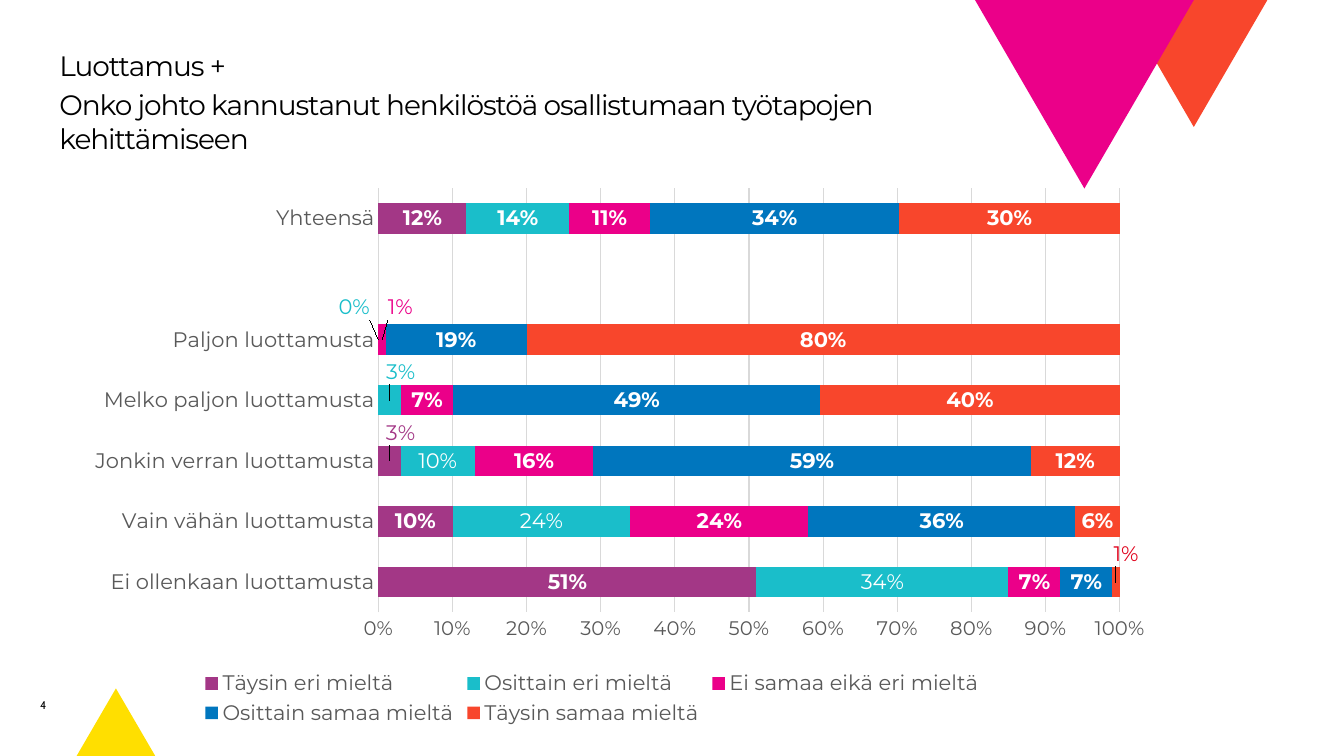
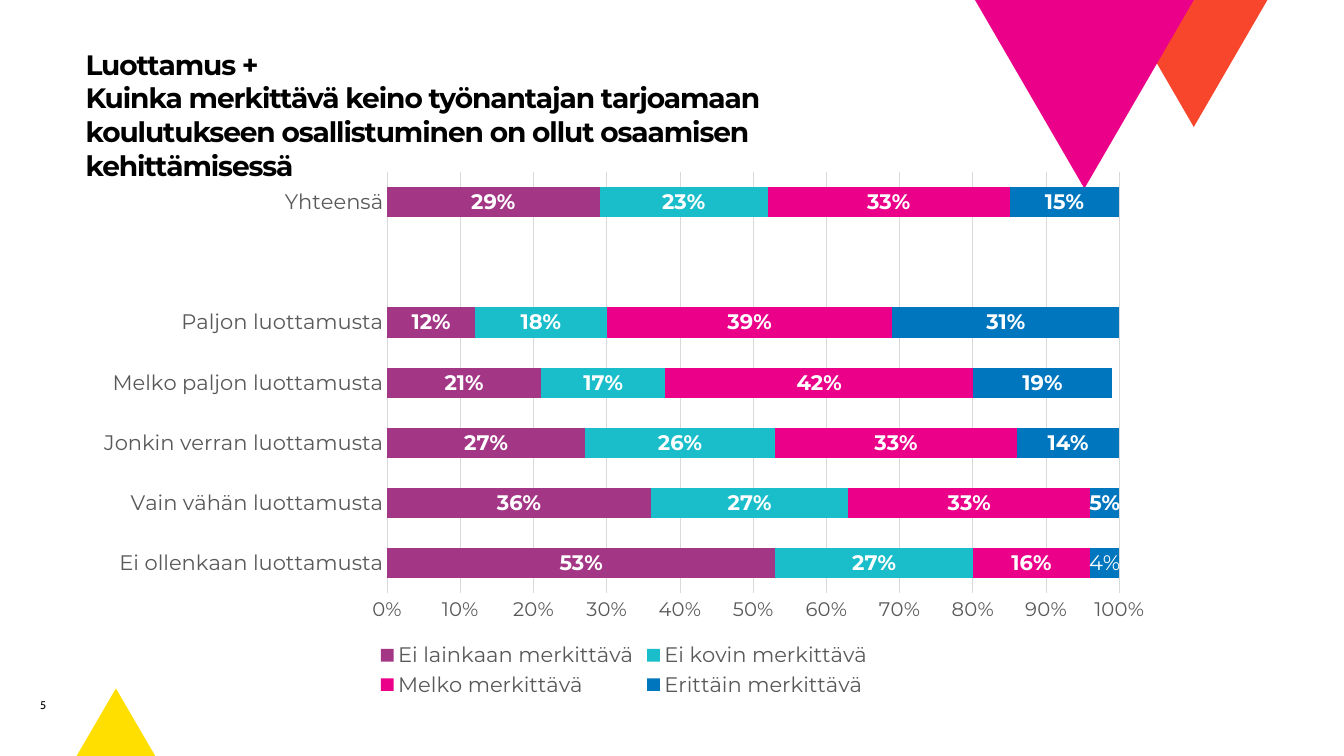
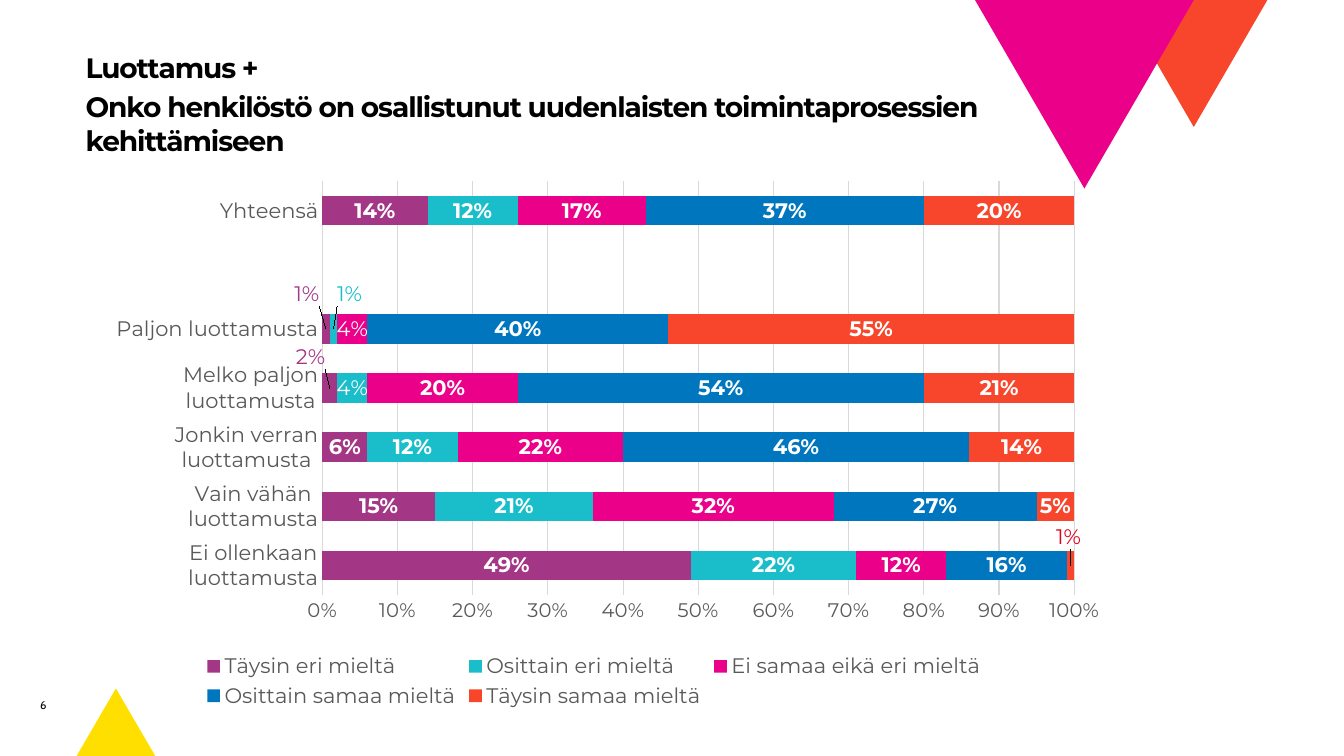
from dataclasses import dataclass

from pptx import Presentation
from pptx.chart.data import CategoryChartData
from pptx.dml.color import RGBColor
from pptx.enum.chart import XL_CHART_TYPE, XL_LEGEND_POSITION, XL_TICK_MARK
from pptx.enum.shapes import MSO_SHAPE
from pptx.oxml.xmlchemy import OxmlElement
from pptx.util import Inches, Pt

STACKED = XL_CHART_TYPE.BAR_STACKED
STACKED_100 = XL_CHART_TYPE.BAR_STACKED_100
LEGEND_BOTTOM = XL_LEGEND_POSITION.BOTTOM
NO_TICK = XL_TICK_MARK.NONE
TRIANGLE = MSO_SHAPE.ISOSCELES_TRIANGLE


@dataclass(frozen=True)
class Theme:
    black: str = "000000"
    white: str = "FFFFFF"
    gray: str = "595959"
    grid: str = "D9D9D9"
    yellow: str = "FFDF00"
    purple: str = "A33786"
    teal: str = "1ABECA"
    pink: str = "EB0089"
    blue: str = "0076BE"
    orange: str = "F8462C"
    red: str = "E0001B"
    heading_font: str = "Montserrat"
    small_font: str = "Cabin"
    title_size: int = 20
    chart_size: int = 15
    scale_size: int = 14
    number_size: int = 8

    @property
    def series_colors(self):
        return (self.purple, self.teal, self.pink, self.blue, self.orange)


@dataclass(frozen=True)
class PointLabel:
    """Exception for one bar's label; shift is in inches from the bar's centre."""
    color: str = Theme.white
    shift: tuple = ()
    hidden: bool = False


THEME = Theme()
PLAIN = PointLabel()
HIDDEN = PointLabel(hidden=True)

GROUPS = ["Ei ollenkaan luottamusta", "Vain vähän luottamusta",
          "Jonkin verran luottamusta", "Melko paljon luottamusta",
          "Paljon luottamusta", "", "Yhteensä"]
AGREEMENT = ["Täysin eri mieltä", "Osittain eri mieltä",
             "Ei samaa eikä eri mieltä", "Osittain samaa mieltä",
             "Täysin samaa mieltä"]
IMPORTANCE = ["Ei lainkaan merkittävä", "Ei kovin merkittävä",
              "Melko merkittävä", "Erittäin merkittävä"]

# Point label exceptions are keyed by (series, category).
SLIDES = [
    dict(
        number="4", bold=False, title_at=(0.49, 0.43, 9.92, 1.68),
        title=["Luottamus +",
               "Onko johto kannustanut henkilöstöä osallistumaan työtapojen "
               "kehittämiseen"],
        kind=STACKED_100, chart_at=(0.3, 1.7, 11.14, 5.54),
        plot_at=(0.31, 0.03, 0.66, 0.76), names=AGREEMENT,
        values=[(0.51, 0.1, 0.03, 0, 0, None, 0.12),
                (0.34, 0.24, 0.1, 0.03, 0, None, 0.14),
                (0.07, 0.24, 0.16, 0.07, 0.01, None, 0.11),
                (0.07, 0.36, 0.59, 0.49, 0.19, None, 0.34),
                (0.01, 0.06, 0.12, 0.4, 0.8, None, 0.3)],
        exceptions={(0, 2): PointLabel(THEME.purple, (0.11, -0.28)),
                    (0, 3): HIDDEN, (0, 4): HIDDEN,
                    (1, 0): PLAIN, (1, 1): PLAIN, (1, 2): PLAIN,
                    (1, 3): PointLabel(THEME.teal, (0.11, -0.28)),
                    (1, 4): PointLabel(THEME.teal, (-0.24, -0.32)),
                    (2, 4): PointLabel(THEME.pink, (0.18, -0.32)),
                    (4, 0): PointLabel(THEME.red, (0.1, -0.28))}),
    dict(
        number="5", bold=True, title_at=(0.75, 0.42, 8.74, 2.19),
        title=["Luottamus +\n"
               "Kuinka merkittävä keino työnantajan tarjoamaan koulutukseen "
               "osallistuminen on ollut osaamisen kehittämisessä"],
        kind=STACKED, chart_at=(0.85, 1.6, 10.68, 5.36),
        plot_at=(0.28, 0.02, 0.68, 0.78), names=IMPORTANCE,
        values=[(0.53, 0.36, 0.27, 0.21, 0.12, None, 0.29),
                (0.27, 0.27, 0.26, 0.17, 0.18, None, 0.23),
                (0.16, 0.33, 0.33, 0.42, 0.39, None, 0.33),
                (0.04, 0.05, 0.14, 0.19, 0.31, None, 0.15)],
        exceptions={(3, 0): PLAIN}),
    dict(
        number="6", bold=True, title_at=(0.75, 0.45, 9.11, 1.06),
        title=["Luottamus +",
               "Onko henkilöstö on osallistunut uudenlaisten "
               "toimintaprosessien kehittämiseen"],
        kind=STACKED, chart_at=(0.71, 1.52, 10.36, 5.55),
        plot_at=(0.24, 0.05, 0.72, 0.74), names=AGREEMENT,
        values=[(0.49, 0.15, 0.06, 0.02, 0.01, None, 0.14),
                (0.22, 0.21, 0.12, 0.04, 0.01, None, 0.12),
                (0.12, 0.32, 0.22, 0.2, 0.04, None, 0.17),
                (0.16, 0.27, 0.46, 0.54, 0.4, None, 0.37),
                (0.01, 0.05, 0.14, 0.21, 0.55, None, 0.2)],
        exceptions={(0, 3): PointLabel(THEME.purple, (-0.19, -0.31)),
                    (0, 4): PointLabel(THEME.purple, (-0.19, -0.35)),
                    (1, 3): PLAIN,
                    (1, 4): PointLabel(THEME.teal, (0.16, -0.35)),
                    (2, 4): PLAIN,
                    (4, 0): PointLabel(THEME.red, (-0.02, -0.28))}),
]


def inches(lengths):
    return [Inches(length) for length in lengths]


def style_font(font, name, size, color, bold=False):
    font.name = name
    font.size = Pt(size)
    font.bold = bold
    font.color.rgb = RGBColor.from_string(color)


def manual_layout(**settings):
    """Return a c:layout element; settings follow the schema's order."""
    layout = OxmlElement("c:layout")
    manual = OxmlElement("c:manualLayout")
    layout.append(manual)
    for tag, value in settings.items():
        child = OxmlElement(f"c:{tag}")
        child.set("val", str(value))
        manual.append(child)
    return layout


class SurveyDeck:
    def __init__(self, theme):
        self.theme = theme
        self.deck = Presentation()
        self.deck.slide_width = Inches(13.33)
        self.deck.slide_height = Inches(7.5)
        self.page = None

    def add_page(self, number):
        self.page = self.deck.slides.add_slide(self.deck.slide_layouts[6])
        self.triangle((0.76, 6.83, 0.78, 0.67), self.theme.yellow)
        self.triangle((11.11, 0, 1.46, 1.26), self.theme.orange, 180)
        self.triangle((9.67, 0, 2.17, 1.87), self.theme.pink, 180)
        self.text((0.3, 6.88, 0.44, 0.37), [number], self.theme.small_font,
                  self.theme.number_size)

    def triangle(self, at, color, rotation=0):
        shape = self.page.shapes.add_shape(TRIANGLE, *inches(at))
        shape.shadow.inherit = False
        shape.rotation = rotation
        shape.fill.solid()
        shape.fill.fore_color.rgb = RGBColor.from_string(color)
        shape.line.fill.background()

    def text(self, at, paragraphs, font, size, bold=False, spacing=0):
        """Add a text box; spacing is letter spacing in points."""
        box = self.page.shapes.add_textbox(*inches(at))
        frame = box.text_frame
        frame.word_wrap = True
        for index, content in enumerate(paragraphs):
            para = frame.add_paragraph() if index else frame.paragraphs[0]
            if index:
                para.space_before = Pt(size * 0.2)
            for row, line in enumerate(content.split("\n")):
                if row:
                    para.add_line_break()
                span = para.add_run()
                span.text = line
                style_font(span.font, font, size, self.theme.black, bold)
                if spacing:
                    span.font._element.set("spc", str(round(spacing * 100)))

    def title(self, at, paragraphs, bold):
        self.text(at, paragraphs, self.theme.heading_font,
                  self.theme.title_size, bold, -0.8)

    def chart(self, kind, at, plot_at, names, values, exceptions):
        theme = self.theme
        data = CategoryChartData(number_format="0%")
        data.categories = GROUPS
        for name, shares in zip(names, values):
            data.add_series(name, shares)
        chart = self.page.shapes.add_chart(kind, *inches(at), data).chart
        style_font(chart.font, theme.small_font, theme.chart_size, theme.black)
        chart.has_title = False
        chart.has_legend = True
        chart.legend.position = LEGEND_BOTTOM
        chart.legend.include_in_layout = False
        style_font(chart.legend.font, theme.heading_font, theme.chart_size,
                   theme.gray)
        self.axes(chart)

        plot = chart.plots[0]
        plot.gap_width = 100
        plot.overlap = 100
        plot.vary_by_categories = False
        for index, series in enumerate(plot.series):
            self.series(series, theme.series_colors[index])
        for (index, point), exception in exceptions.items():
            self.point_label(plot.series[index], point, exception, at)

        area = chart._chartSpace.chart.plotArea
        for layout in area.xpath("c:layout"):
            area.remove(layout)
        left, top, width, height = plot_at
        area.insert(0, manual_layout(layoutTarget="inner", xMode="edge",
                                     yMode="edge", x=left, y=top,
                                     w=width, h=height))

    def axes(self, chart):
        theme = self.theme
        groups, scale = chart.category_axis, chart.value_axis
        for axis, size in ((groups, theme.chart_size),
                           (scale, theme.scale_size)):
            axis.major_tick_mark = NO_TICK
            axis.minor_tick_mark = NO_TICK
            style_font(axis.tick_labels.font, theme.heading_font, size,
                       theme.gray)
        groups.has_major_gridlines = False
        scale.has_major_gridlines = True
        for line in (groups.format.line, scale.major_gridlines.format.line):
            line.color.rgb = RGBColor.from_string(theme.grid)
            line.width = Pt(0.75)
        scale.format.line.fill.background()
        scale.minimum_scale = 0
        scale.maximum_scale = 1
        scale.major_unit = 0.1
        scale.tick_labels.number_format = "0%"
        scale.tick_labels.number_format_is_linked = False

    def series(self, series, color):
        series.format.fill.solid()
        series.format.fill.fore_color.rgb = RGBColor.from_string(color)
        series.format.line.fill.background()
        labels = series.data_labels
        labels.show_value = True
        labels.number_format = "0%"
        labels.number_format_is_linked = False
        style_font(labels.font, self.theme.heading_font,
                   self.theme.chart_size, self.theme.white, True)

    def point_label(self, series, point, exception, chart_at):
        style_font(series.points[point].data_label.font,
                   self.theme.heading_font, self.theme.chart_size,
                   exception.color)
        label = series._element.xpath(
            f"c:dLbls/c:dLbl[c:idx/@val='{point}']")[0]
        if exception.hidden:
            for child in list(label)[1:]:
                label.remove(child)
            delete = OxmlElement("c:delete")
            delete.set("val", "1")
            label.append(delete)
        elif exception.shift:
            across, down = exception.shift
            label.insert(1, manual_layout(x=round(across / chart_at[2], 4),
                                          y=round(down / chart_at[3], 4)))


def main():
    survey = SurveyDeck(THEME)
    for slide in SLIDES:
        survey.add_page(slide["number"])
        survey.title(slide["title_at"], slide["title"], slide["bold"])
        survey.chart(slide["kind"], slide["chart_at"], slide["plot_at"],
                     slide["names"], slide["values"], slide["exceptions"])
    survey.deck.save("out.pptx")


if __name__ == "__main__":
    main()
